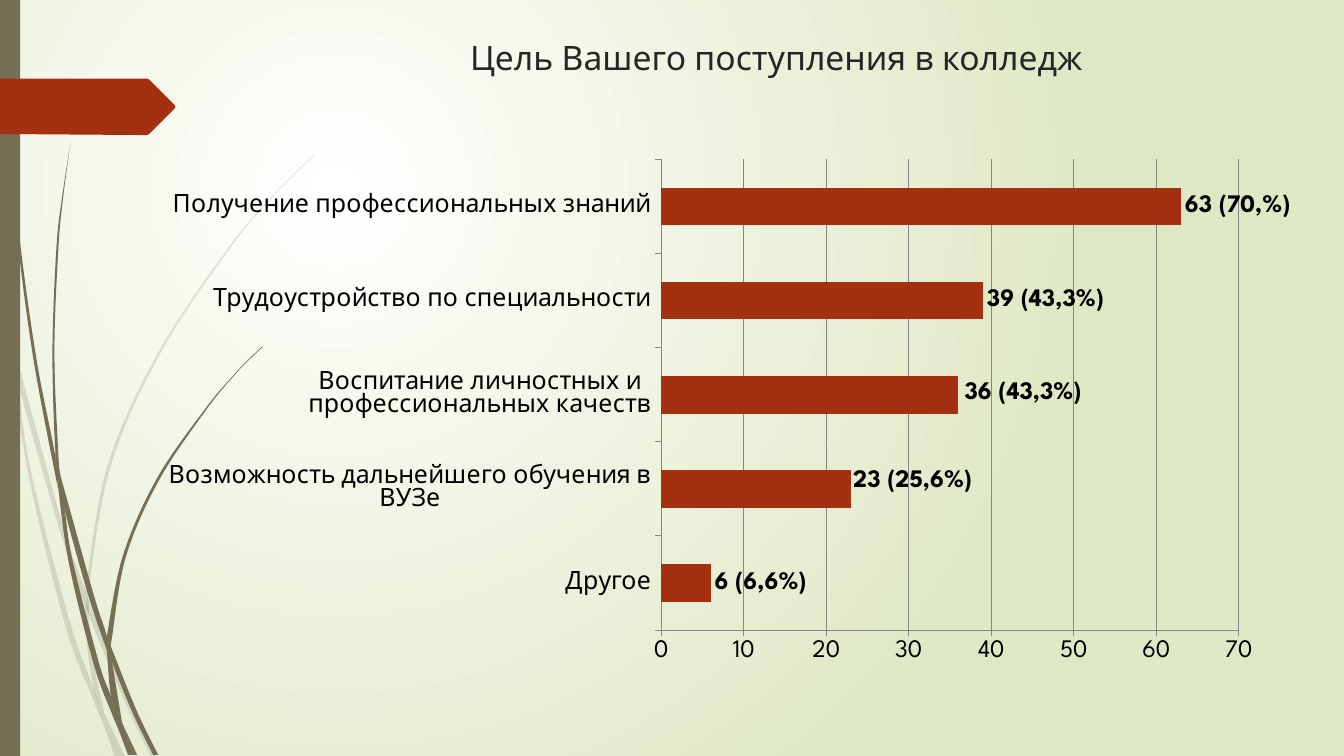
from dataclasses import dataclass

from lxml import etree
from pptx import Presentation
from pptx.chart.data import CategoryChartData
from pptx.dml.color import RGBColor
from pptx.enum.chart import XL_CHART_TYPE, XL_LABEL_POSITION, XL_TICK_MARK
from pptx.enum.shapes import MSO_SHAPE
from pptx.enum.text import MSO_ANCHOR, PP_ALIGN
from pptx.oxml import parse_xml
from pptx.oxml.ns import nsdecls, qn
from pptx.util import Inches, Pt

BAR_CLUSTERED = XL_CHART_TYPE.BAR_CLUSTERED
OUTSIDE_END = XL_LABEL_POSITION.OUTSIDE_END
TICK_OUTSIDE = XL_TICK_MARK.OUTSIDE
RECTANGLE = MSO_SHAPE.RECTANGLE
TOP, CENTER = MSO_ANCHOR.TOP, PP_ALIGN.CENTER

CELL = Inches(0.01)  # grid of 1333 columns by 750 rows
COLUMNS, ROWS = 1333, 750
FONT = "League Spartan"
COLORS = {
    "glow": "FFFFFF", "meadow": "DFE8C4", "stalk": "766F54", "accent": "A53010",
    "title": "262626", "text": "000000", "grid": "868686",
}

Point = tuple[float, float]


@dataclass(frozen=True)
class Blade:
    """A piece of grass between two smooth edges, both listed from the top down."""
    left: list[Point]
    right: list[Point]


@dataclass(frozen=True)
class Goal:
    name: str
    count: int
    label: str
    label_shift: Point = (0, 0)  # per cent of the chart's size


PALE_BLADES = [
    Blade([(0, 282), (0, 299), (10, 344), (11, 350)], [(0, 282), (9, 322), (11, 350)]),
    Blade([(14, 345), (17, 376), (58, 522), (84, 599)], [(14, 345), (62, 520), (85, 586)]),
    Blade([(88, 596), (88, 610), (123, 694), (150, 751)],
          [(88, 596), (92, 607), (127, 692), (155, 751)]),
    Blade([(105, 711), (119, 751)], [(105, 711), (124, 751)]),
    Blade([(11, 350), (28, 470), (65, 621), (92, 693), (101, 714)],
          [(11, 350), (17, 376), (31, 469), (70, 619), (93, 683), (99, 707), (101, 714)]),
    Blade([(84, 599), (87, 646), (93, 683), (96, 692), (105, 711)],
          [(84, 599), (88, 608), (91, 646), (103, 706), (105, 711)]),
    Blade([(312, 153), (289, 175), (268, 197), (228, 244), (158, 348), (107, 461),
           (85, 584), (85, 586)],
          [(312, 154), (290, 175), (268, 198), (229, 245), (160, 349), (110, 462),
           (88, 584), (88, 596)]),
    Blade([(101, 714), (114, 751)], [(101, 714), (119, 751)]),
    Blade([(85, 586), (84, 599), (88, 608)], [(85, 586), (88, 596), (88, 610)]),
    Blade([(93, 683), (99, 707), (101, 714), (119, 751)],
          [(93, 683), (96, 692), (105, 711), (119, 751)]),
]
DARK_BLADES = [
    Blade([(3, 0), (4, 48), (7, 110), (17, 233), (33, 355), (56, 477), (57, 481)],
          [(4, 0), (5, 48), (8, 109), (19, 232), (36, 355), (55, 453), (57, 481)]),
    Blade([(60, 472), (64, 505), (88, 592), (106, 645)],
          [(60, 472), (93, 590), (106, 631), (106, 645)]),
    Blade([(110, 641), (111, 656), (132, 708), (152, 749)],
          [(110, 641), (113, 649), (136, 706), (157, 749)]),
    Blade([(57, 477), (68, 557), (93, 659), (111, 708), (117, 722)],
          [(57, 477), (64, 505), (72, 556), (98, 657), (110, 691), (116, 717), (117, 722)]),
    Blade([(70, 141), (62, 193), (56, 245), (52, 349), (55, 449), (60, 472)],
          [(70, 141), (63, 193), (58, 245), (54, 349), (58, 453), (60, 472)]),
    Blade([(122, 719), (133, 749)], [(122, 719), (136, 749)]),
    Blade([(55, 449), (55, 453), (57, 477), (64, 505)], [(55, 449), (60, 472), (64, 505)]),
    Blade([(260, 344), (245, 358), (231, 373), (204, 405), (156, 474), (122, 551),
           (106, 631)],
          [(261, 344), (245, 359), (231, 374), (205, 406), (158, 476), (125, 552),
           (111, 633), (110, 641)]),
    Blade([(117, 722), (127, 749)], [(117, 722), (131, 749)]),
    Blade([(106, 645), (110, 691), (116, 706), (122, 719)],
          [(106, 645), (109, 651), (111, 656), (121, 716), (122, 719)]),
    Blade([(106, 631), (106, 645), (109, 651), (111, 656)],
          [(106, 631), (110, 641), (111, 656)]),
    Blade([(110, 691), (116, 717), (117, 722), (130, 749)],
          [(110, 691), (116, 706), (122, 719), (133, 749)]),
]
ARROW = [(0, 78), (146, 78), (148, 79), (173, 104), (174, 106), (173, 108),
         (148, 133), (146, 134), (136, 134), (0, 133)]
GOALS = [
    Goal("Другое", 6, "6 (6,6%)"),
    Goal("Возможность дальнейшего обучения в ВУЗе", 23, "23 (25,6%)", (-0.15, -1.5)),
    Goal("Воспитание личностных и профессиональных качеств", 36, "36 (43,3%)", (0.2, -0.2)),
    Goal("Трудоустройство по специальности", 39, "39 (43,3%)"),
    Goal("Получение профессиональных знаний", 63, "63 (70,%)"),
]


def rgb(name: str) -> RGBColor:
    return RGBColor.from_string(COLORS[name])


def cells(*counts: float) -> list[int]:
    return [round(count * CELL) for count in counts]


def set_font(font, size: int, color: str, bold: bool = False) -> None:
    font.name, font.size, font.bold = FONT, Pt(size), bold
    font.color.rgb = rgb(color)


def paint(shape, color: str) -> None:
    shape.shadow.inherit = False
    shape.fill.solid()
    shape.fill.fore_color.rgb = rgb(color)
    shape.line.fill.background()


def paint_background(slide) -> None:
    fill = slide.background.fill
    fill.gradient()
    for stop, color in zip(fill.gradient_stops, ("glow", "meadow")):
        stop.color.rgb = rgb(color)
    gradient = slide.background._cSld.find(".//" + qn("a:gradFill"))
    gradient.replace(gradient.find(qn("a:lin")), parse_xml(
        f'<a:path {nsdecls("a")} path="circle">'
        '<a:fillToRect l="50000" t="50000" r="100000" b="100000"/></a:path>'))


def draw_outline(slide, points: list[Point], color: str):
    builder = slide.shapes.build_freeform(*cells(*points[0]))
    builder.add_line_segments([cells(*point) for point in points[1:]], close=True)
    shape = builder.convert_to_shape()
    paint(shape, color)
    return shape


def bend(shape, edges: list[list[Point]]) -> None:
    """Turn the outline's segments along each edge into Catmull-Rom curves."""
    outline = shape._element.spPr.find(".//" + qn("a:path"))
    segments = outline.findall(qn("a:lnTo"))
    origin = [min(values) for values in zip(*(p for edge in edges for p in edge))]
    position = 0
    for edge in edges:
        padded = [edge[0], *edge, edge[-1]]
        for a, b, c, d in zip(padded, padded[1:], padded[2:], padded[3:]):
            handles = ([q + (r - p) / 6 for p, q, r in zip(a, b, c)],
                       [r - (s - q) / 6 for q, r, s in zip(b, c, d)], c)
            curve = etree.Element(qn("a:cubicBezTo"))
            for handle in handles:
                x, y = cells(*(value - start for value, start in zip(handle, origin)))
                etree.SubElement(curve, qn("a:pt"), x=str(x), y=str(y))
            outline.replace(segments[position], curve)
            position += 1
        position += 1


def draw_blade(slide, blade: Blade, opacity: int) -> None:
    edges = [blade.left, blade.right[::-1]]
    shape = draw_outline(slide, edges[0] + edges[1], "stalk")
    bend(shape, edges)
    if opacity < 100:
        color = shape._element.spPr.find(qn("a:solidFill"))[0]
        etree.SubElement(color, qn("a:alpha"), val=str(opacity * 1000))


def draw_title(slide, wording: str) -> None:
    frame = slide.shapes.add_textbox(*cells(282, 32, 976, 84)).text_frame
    frame.word_wrap, frame.vertical_anchor = True, TOP
    frame.text = wording
    heading = frame.paragraphs[0]
    heading.alignment = CENTER
    set_font(heading.runs[0].font, 24, "title")


def layout_xml(**shares: float):
    """Place a chart part by shares of the chart's size."""
    target = '<c:layoutTarget val="inner"/>' if "w" in shares else ""
    modes = '<c:xMode val="edge"/><c:yMode val="edge"/>' if target else ""
    values = "".join(f'<c:{key} val="{value}"/>' for key, value in shares.items())
    return parse_xml(f'<c:layout {nsdecls("c")}><c:manualLayout>{target}{modes}{values}'
                     '</c:manualLayout></c:layout>')


def draw_goals(slide, goals: list[Goal]) -> None:
    data = CategoryChartData()
    data.categories = [goal.name for goal in goals]
    data.add_series("Series 1", [goal.count for goal in goals])
    chart = slide.shapes.add_chart(BAR_CLUSTERED, *cells(122, 138, 1158, 545), data).chart
    chart.has_legend = chart.has_title = False
    set_font(chart.font, 18, "text")

    plot = chart.plots[0]
    plot.gap_width, plot.vary_by_categories = 150, False
    plot_area = chart._chartSpace.chart.plotArea
    for automatic in plot_area.findall(qn("c:layout")):
        plot_area.remove(automatic)
    plot_area.insert(0, layout_xml(x=0.467, y=0.037, w=0.501, h=0.857))

    counts = chart.value_axis
    counts.minimum_scale, counts.maximum_scale, counts.major_unit = 0, 70, 10
    counts.has_major_gridlines = True
    for axis in (chart.category_axis, counts):
        axis.major_tick_mark = TICK_OUTSIDE
    for part in (chart.category_axis, counts, counts.major_gridlines):
        part.format.line.color.rgb, part.format.line.width = rgb("grid"), Pt(0.75)

    bars = plot.series[0]
    bars.format.fill.solid()
    bars.format.fill.fore_color.rgb = rgb("accent")
    for index, goal in enumerate(goals):
        label = bars.points[index].data_label
        label.text_frame.text = goal.label
        set_font(label.text_frame.paragraphs[0].runs[0].font, 18, "text", bold=True)
        label.position = OUTSIDE_END
        if any(goal.label_shift):
            across, down = goal.label_shift
            label._dLbl.insert(1, layout_xml(x=across / 100, y=down / 100))


def main() -> None:
    deck = Presentation()
    deck.slide_width, deck.slide_height = cells(COLUMNS, ROWS)
    slide = deck.slides.add_slide(deck.slide_layouts[6])
    paint_background(slide)
    for blades, opacity in ((PALE_BLADES, 20), (DARK_BLADES, 100)):
        for blade in blades:
            draw_blade(slide, blade, opacity)
    paint(slide.shapes.add_shape(RECTANGLE, *cells(0, 0, 20, ROWS)), "stalk")
    draw_outline(slide, ARROW, "accent")
    draw_title(slide, "Цель Вашего поступления в колледж")
    draw_goals(slide, GOALS)
    deck.save("out.pptx")


if __name__ == "__main__":
    main()
